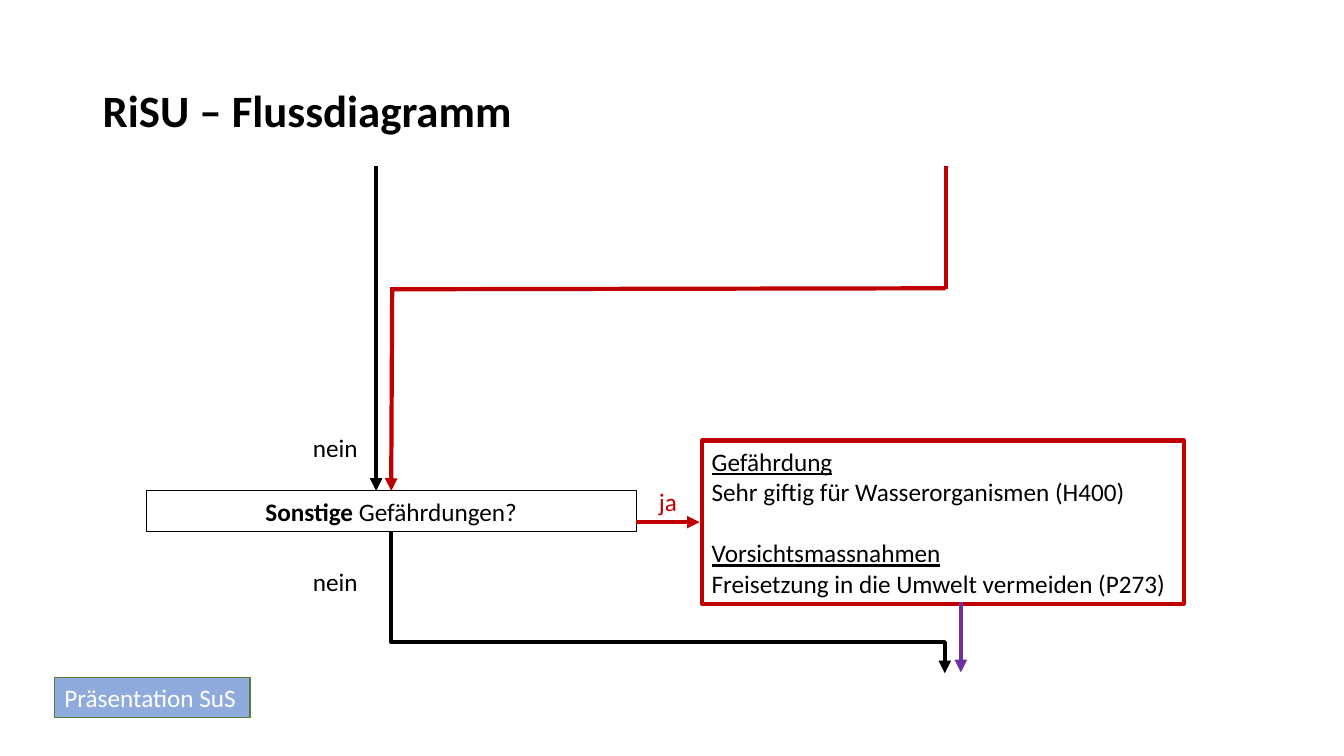
from dataclasses import dataclass

from lxml import etree
from pptx import Presentation
from pptx import util as u
from pptx.dml.color import RGBColor
from pptx.enum import shapes, text
from pptx.oxml.ns import qn

PX = 9144  # EMU per px, 100 px to the inch


@dataclass(frozen=True)
class Theme:
    font: str = "Calibri"
    black: str = "000000"
    red: str = "C00000"
    purple: str = "7030A0"
    white: str = "FFFFFF"
    blue: str = "8FAADC"
    green: str = "538035"
    title_size: int = 32
    body_size: int = 18
    thin: float = 0.75
    medium: float = 1
    thick: float = 3


class FlowSlide:
    def __init__(self, page, theme):
        self.page = page
        self.theme = theme

    def style_span(self, span, color, size, bold=False, underline=False):
        font = span.font
        font.name, font.size = self.theme.font, u.Pt(size)
        font.bold, font.underline = bold, underline
        font.color.rgb = RGBColor.from_string(color)

    def prepare_frame(self, shape, inset=True):
        frame = shape.text_frame
        frame.word_wrap = True
        frame.vertical_anchor = text.MSO_ANCHOR.MIDDLE
        if not inset:
            frame.margin_left = frame.margin_right = 0
            frame.margin_top = frame.margin_bottom = 0
        return frame

    def title(self, bounds, words):
        shape = self.page.shapes.add_textbox(*(n * PX for n in bounds))
        frame = self.prepare_frame(shape)
        frame.text = words
        para = frame.paragraphs[0]
        para.line_spacing = 0.9
        self.style_span(para.runs[0], self.theme.black, self.theme.title_size, bold=True)

    def label(self, left, top, words, color):
        shape = self.page.shapes.add_textbox(left * PX, top * PX, 53 * PX, 30 * PX)
        frame = self.prepare_frame(shape, inset=False)
        frame.text = words
        para = frame.paragraphs[0]
        para.alignment = text.PP_ALIGN.CENTER
        self.style_span(para.runs[0], color, self.theme.body_size)

    def box(self, bounds, line, width, fill=None):
        """Add a rectangle and return its empty text frame."""
        shape = self.page.shapes.add_shape(
            shapes.MSO_SHAPE.RECTANGLE, *(n * PX for n in bounds))
        shape.shadow.inherit = False
        shape.line.color.rgb = RGBColor.from_string(line)
        shape.line.width = u.Pt(width)
        if fill:
            shape.fill.solid()
            shape.fill.fore_color.rgb = RGBColor.from_string(fill)
        else:
            shape.fill.background()
        return self.prepare_frame(shape)

    def question(self, bounds, bold_words, words):
        para = self.box(bounds, self.theme.black, self.theme.thin).paragraphs[0]
        para.alignment = text.PP_ALIGN.CENTER
        for part, bold in ((bold_words, True), (words, False)):
            span = para.add_run()
            span.text = part
            self.style_span(span, self.theme.black, self.theme.body_size, bold=bold)

    def hazard_box(self, bounds, sections):
        """Add a box of underlined headings, each with one line below."""
        frame = self.box(bounds, self.theme.red, self.theme.thick)
        frame.text = "\n".join(line for section in sections for line in section)
        for index, para in enumerate(frame.paragraphs):
            is_heading = index % 2 == 0
            para.alignment = text.PP_ALIGN.LEFT
            if is_heading and index:
                para.space_before = u.Pt(22)
            self.style_span(para.runs[0], self.theme.black, self.theme.body_size,
                            underline=is_heading)

    def tag(self, bounds, words):
        frame = self.box(bounds, self.theme.green, self.theme.medium, self.theme.blue)
        frame.text = words
        para = frame.paragraphs[0]
        para.alignment = text.PP_ALIGN.LEFT
        self.style_span(para.runs[0], self.theme.white, self.theme.body_size)

    def line(self, start, end, color, arrow=False, kind=shapes.MSO_CONNECTOR.STRAIGHT):
        connector = self.page.shapes.add_connector(
            kind, *(round(n * PX) for n in (*start, *end)))
        connector.line.color.rgb = RGBColor.from_string(color)
        connector.line.width = u.Pt(self.theme.thick)
        properties = connector._element.spPr
        if arrow:
            etree.SubElement(properties.find(qn("a:ln")), qn("a:tailEnd"), type="triangle")
        etree.SubElement(properties, qn("a:effectLst"))
        return connector

    def elbow_arrow(self, start, end, color, bend):
        """Run down, right and down again; bend is the share of the drop before the turn."""
        middle_x, middle_y = (start[0] + end[0]) / 2, (start[1] + end[1]) / 2
        half_run, half_drop = (end[0] - start[0]) / 2, (end[1] - start[1]) / 2
        connector = self.line(
            (middle_x - half_drop, middle_y - half_run),
            (middle_x + half_drop, middle_y + half_run),
            color, True, shapes.MSO_CONNECTOR.ELBOW)
        properties = connector._element.spPr
        frame = properties.find(qn("a:xfrm"))
        frame.set("rot", str(270 * 60000))
        frame.set("flipH", "1")
        guides = properties.find(qn("a:prstGeom")).find(qn("a:avLst"))
        etree.SubElement(guides, qn("a:gd"), name="adj1", fmla=f"val {round(bend * 100000)}")


def main():
    theme = Theme()
    deck = Presentation()
    deck.slide_width, deck.slide_height = 1333 * PX, 750 * PX
    flow = FlowSlide(deck.slides.add_slide(deck.slide_layouts[6]), theme)

    flow.question((145, 487, 486, 40), "Sonstige ", "Gefährdungen?")
    flow.line((373, 165), (373, 487), theme.black, arrow=True)
    for top in (429, 562):
        flow.label(306, top, "nein", theme.black)

    flow.hazard_box((696, 437, 478, 162), (
        ("Gefährdung", "Sehr giftig für Wasserorganismen (H400)"),
        ("Vorsichtsmassnahmen", "Freisetzung in die Umwelt vermeiden (P273)"),
    ))
    flow.line((631, 518), (694, 518), theme.red, arrow=True)
    flow.label(636, 482, "ja", theme.red)
    flow.title((92, 40, 1150, 145), "RiSU – Flussdiagramm")

    flow.line((389, 286), (388, 487), theme.red, arrow=True)
    flow.line((938, 165), (938, 287), theme.red)
    flow.line((387, 287), (938, 286), theme.red)

    flow.tag((54, 672, 194, 40), "Präsentation SuS")
    flow.line((953, 597), (953, 667), theme.purple, arrow=True)
    flow.elbow_arrow((388, 528), (937, 668), theme.black, bend=0.78)

    deck.save("out.pptx")


if __name__ == "__main__":
    main()
